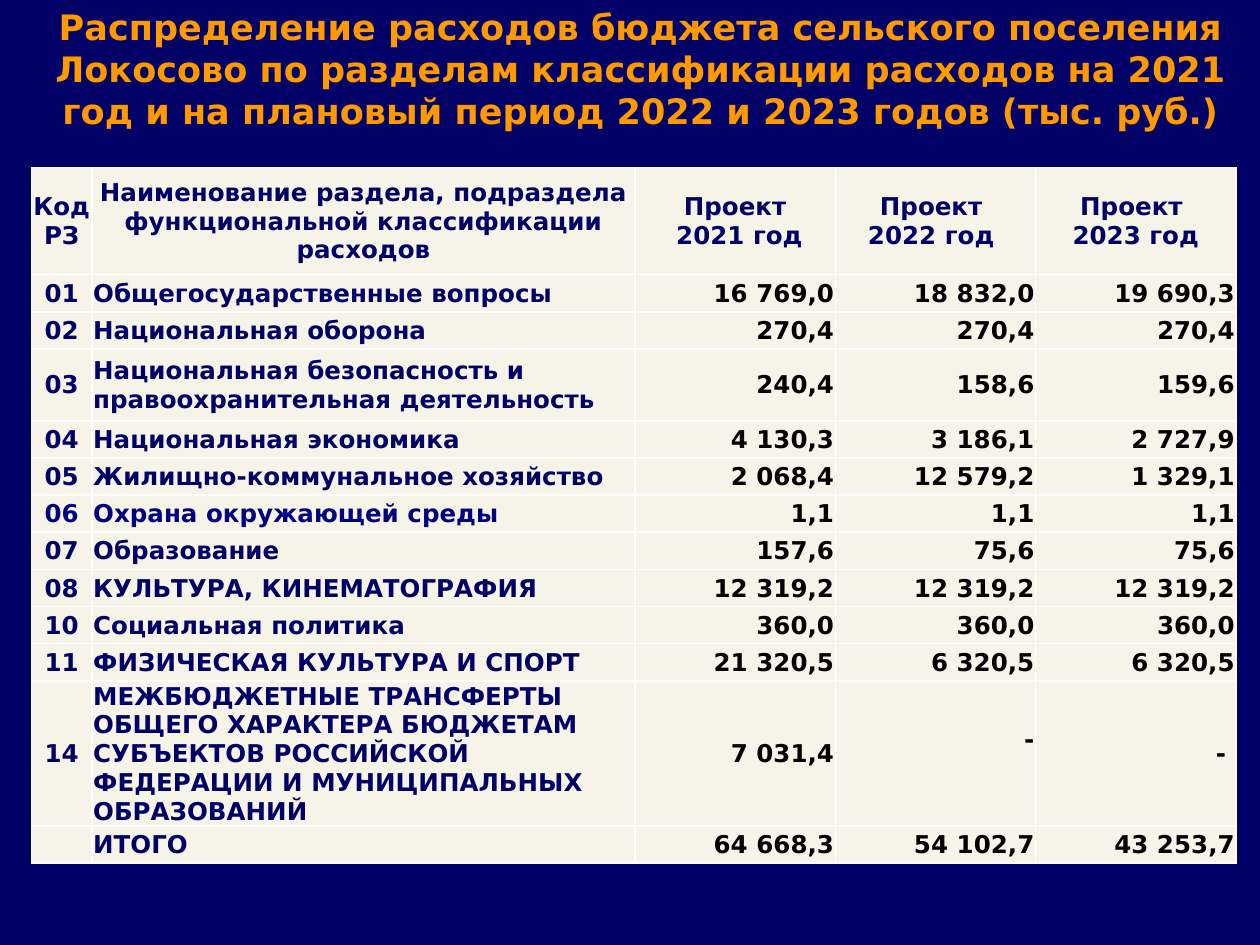
from lxml import etree
from pptx import Presentation
from pptx.dml.color import RGBColor
from pptx.enum.text import MSO_ANCHOR, MSO_AUTO_SIZE, PP_ALIGN
from pptx.oxml.ns import qn
from pptx.util import Inches, Pt

LEFT, CENTER, RIGHT = PP_ALIGN.LEFT, PP_ALIGN.CENTER, PP_ALIGN.RIGHT
MIDDLE = MSO_ANCHOR.MIDDLE
NO_FIT = MSO_AUTO_SIZE.NONE

COLORS = {
    "navy": "000066",
    "blue": "000080",
    "orange": "FF9900",
    "cream": "F6F3E8",
    "black": "000000",
    "white": "FFFFFF",
}
TITLE_FONT = {"name": "DejaVu Sans", "size": Pt(20), "bold": True}
CELL_FONT = {"name": "DejaVu Sans", "size": Pt(14), "bold": True}
CELL_BOX = {
    "vertical_anchor": MIDDLE,
    "margin_left": Inches(0.01),
    "margin_right": Inches(0.01),
    "margin_top": Inches(0.01),
    "margin_bottom": 0,
}
NO_SIDES = {"margin_left": 0, "margin_right": 0}
PLAIN_TABLE = {"first_row": False, "horz_banding": False}

TITLE = (
    "Распределение расходов бюджета сельского поселения Локосово по разделам "
    "классификации расходов на 2021 год и на плановый период 2022 и 2023 годов "
    "(тыс. руб.)"
)
HEADS = [
    "Код РЗ",
    "Наименование раздела, подраздела функциональной классификации расходов",
    "Проект\n 2021 год",
    "Проект \n2022 год ",
    "Проект \n2023 год",
]
ROWS = [
    ("01", "Общегосударственные вопросы", "16 769,0", "18 832,0", "19 690,3"),
    ("02", "Национальная оборона", "270,4", "270,4", "270,4"),
    ("03", "Национальная безопасность и правоохранительная деятельность",
     "240,4", "158,6", "159,6"),
    ("04", "Национальная экономика", "4 130,3", "3 186,1", "2 727,9"),
    ("05", "Жилищно-коммунальное хозяйство", "2 068,4", "12 579,2", "1 329,1"),
    ("06", "Охрана окружающей среды", "1,1", "1,1", "1,1"),
    ("07", "Образование", "157,6", "75,6", "75,6"),
    ("08", "КУЛЬТУРА, КИНЕМАТОГРАФИЯ", "12 319,2", "12 319,2", "12 319,2"),
    ("10", "Социальная политика", "360,0", "360,0", "360,0"),
    ("11", "ФИЗИЧЕСКАЯ КУЛЬТУРА И СПОРТ", "21 320,5", "6 320,5", "6 320,5"),
    ("14", "МЕЖБЮДЖЕТНЫЕ ТРАНСФЕРТЫ ОБЩЕГО ХАРАКТЕРА БЮДЖЕТАМ СУБЪЕКТОВ "
     "РОССИЙСКОЙ ФЕДЕРАЦИИ И МУНИЦИПАЛЬНЫХ ОБРАЗОВАНИЙ", "7 031,4", "-", "- "),
    ("", "ИТОГО", "64 668,3", "54 102,7", "43 253,7"),
]
ALIGNS = [CENTER, LEFT, RIGHT, RIGHT, RIGHT]
WIDTHS = [0.48, 4.31] + [1.59] * 3
TALL = {"03": 0.57, "14": 1.15}
ROW_HIGH = 2.95 / (len(ROWS) - len(TALL))  # single-line rows share 2.95


def apply(target, values):
    for name, value in values.items():
        setattr(target, name, value)


def rgb(name):
    return RGBColor.from_string(COLORS[name])


def write(frame, text, align, font, color):
    """Put each line of the text in a paragraph of its own."""
    for i, line in enumerate(text.split("\n")):
        para = frame.add_paragraph() if i else frame.paragraphs[0]
        para.alignment = align
        run = para.add_run()
        run.text = line
        apply(run.font, font)
        run.font.color.rgb = rgb(color)


def add_edges(cell):
    """Draw thin white borders, which must stand before the cell fill."""
    props = cell._tc.get_or_add_tcPr()
    for i, side in enumerate(("lnL", "lnR", "lnT", "lnB")):
        line = etree.Element(qn(f"a:{side}"), w=str(Pt(1)))
        fill = etree.SubElement(line, qn("a:solidFill"))
        etree.SubElement(fill, qn("a:srgbClr"), val=COLORS["white"])
        props.insert(i, line)


def fill_cell(cell, text, align, color):
    apply(cell, CELL_BOX)
    cell.fill.solid()
    cell.fill.fore_color.rgb = rgb("cream")
    add_edges(cell)
    write(cell.text_frame, text, align, CELL_FONT, color)


def add_title(slide):
    title = slide.shapes.title
    apply(title, {"left": Inches(0.17), "top": 0,
                  "width": Inches(9.83), "height": Inches(1.08)})
    frame = title.text_frame
    apply(frame, {"word_wrap": True, "auto_size": NO_FIT,
                  "vertical_anchor": MIDDLE})
    write(frame, TITLE, CENTER, TITLE_FONT, "orange")


def add_budget(slide):
    highs = [0.85] + [TALL.get(row[0], ROW_HIGH) for row in ROWS]
    frame = slide.shapes.add_table(
        len(highs), len(WIDTHS), Inches(0.25), Inches(1.33),
        Inches(sum(WIDTHS)), Inches(sum(highs)))
    table = frame.table
    apply(table, PLAIN_TABLE)
    for col, width in zip(table.columns, WIDTHS):
        col.width = Inches(width)
    for row, high in zip(table.rows, highs):
        row.height = Inches(high)

    for c, head in enumerate(HEADS):
        fill_cell(table.cell(0, c), head, CENTER, "navy")
    apply(table.cell(0, 0), NO_SIDES)  # keeps the code label whole
    for r, row in enumerate(ROWS, 1):
        label = "blue" if row[0] == "06" else "navy"
        for c, (text, align) in enumerate(zip(row, ALIGNS)):
            cell = table.cell(r, c)
            fill_cell(cell, text, align, label if c < 2 else "black")
            if text == "-":
                cell.margin_bottom = Inches(0.23)  # this dash sits higher


def main():
    deck = Presentation()
    apply(deck, {"slide_width": Inches(10), "slide_height": Inches(7.5)})
    slide = deck.slides.add_slide(deck.slide_layouts[5])
    back = slide.background.fill
    back.solid()
    back.fore_color.rgb = rgb("navy")
    add_title(slide)
    add_budget(slide)
    deck.save("out.pptx")


if __name__ == "__main__":
    main()
